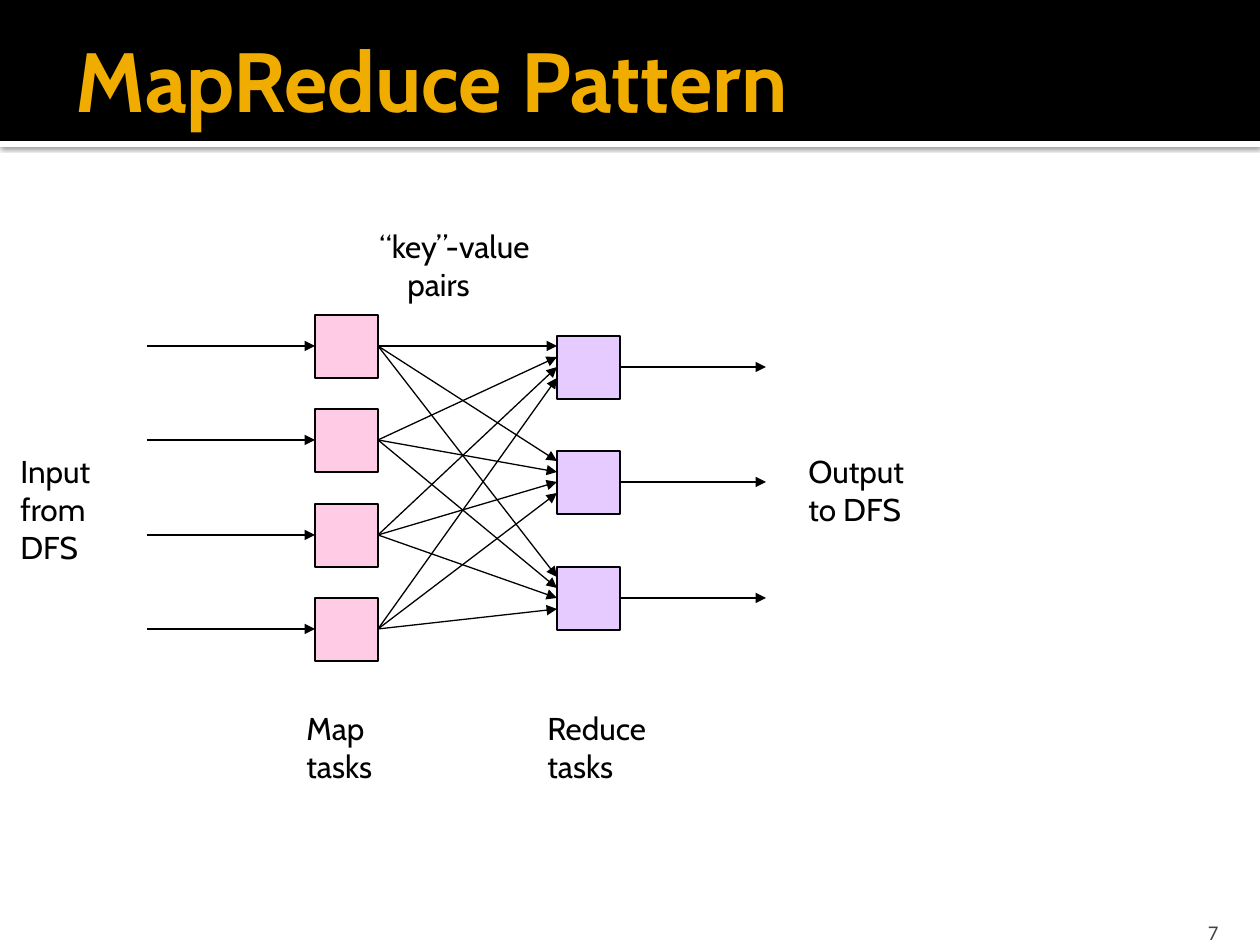
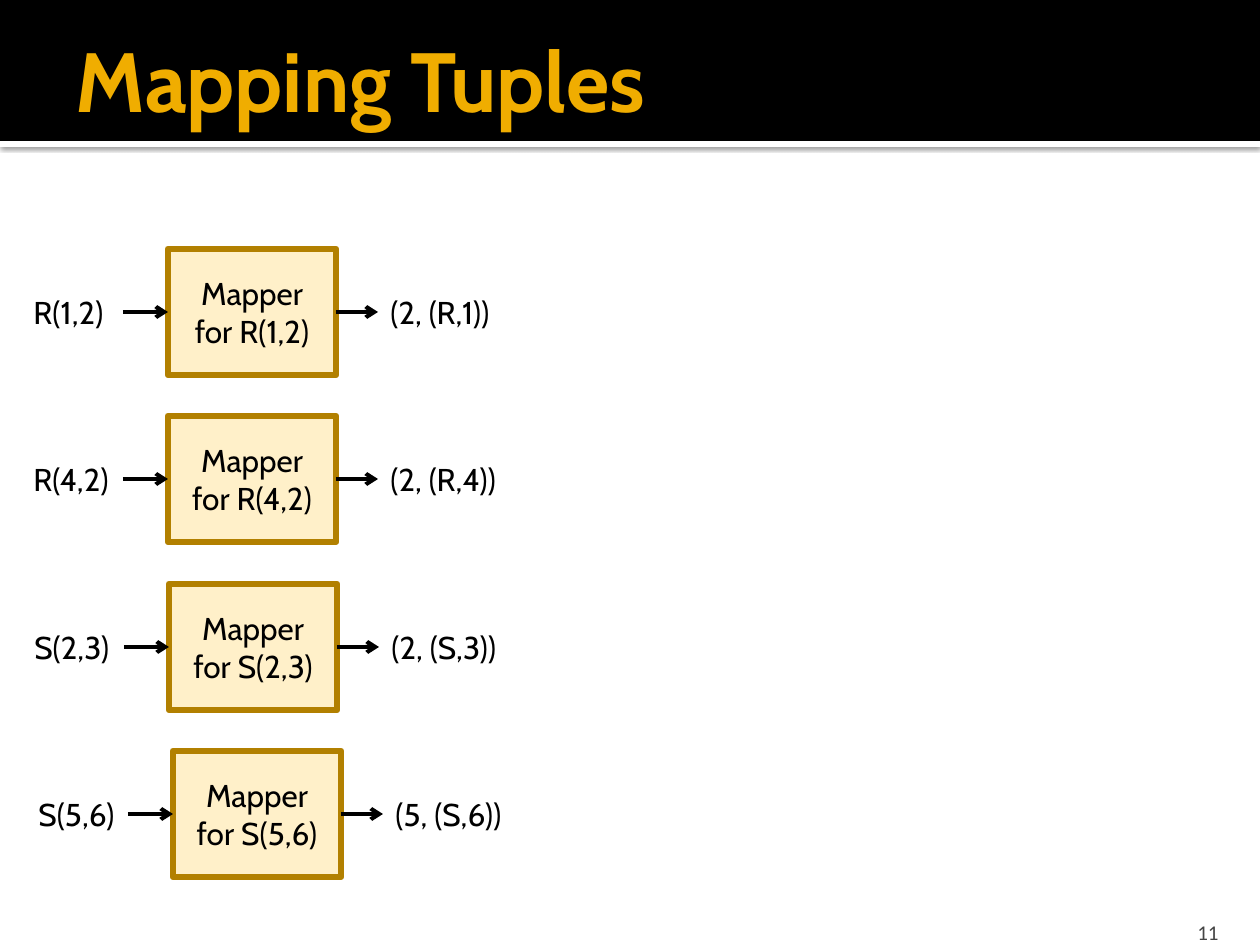
from lxml.etree import SubElement
from pptx import Presentation
from pptx.dml.color import RGBColor
from pptx.enum.shapes import MSO_CONNECTOR as LINK, MSO_SHAPE as FORM
from pptx.enum.text import MSO_ANCHOR as ANCHOR, PP_ALIGN as ALIGN
from pptx.oxml.ns import qn
from pptx.util import Inches, Pt

PX = Inches(1) / 126
BLACK = RGBColor(0x00, 0x00, 0x00)
WHITE = RGBColor(0xFF, 0xFF, 0xFF)
GOLD = RGBColor(0xF0, 0xAD, 0x00)
BROWN = RGBColor(0xB2, 0x80, 0x00)
CREAM = RGBColor(0xFF, 0xF0, 0xC9)
PINK = RGBColor(0xFF, 0x99, 0xCC)
LILAC = RGBColor(0xCC, 0x99, 0xFF)
GREY = RGBColor(0x45, 0x45, 0x45)


def write(slide, text, box=None, size=18, font="Cabin", color=BLACK, bold=False,
          align=ALIGN.LEFT, anchor=ANCHOR.TOP, indent=0,
          fill=None, alpha=None, edge=None, weight=0.75):
    """Fill the title, or a new box at (left, top, width, height) in px."""
    if box is None:
        shape = slide.shapes.title
    elif fill is None:
        shape = slide.shapes.add_textbox(*[round(n * PX) for n in box])
    else:
        shape = slide.shapes.add_shape(FORM.RECTANGLE, *[round(n * PX) for n in box])
        shape.shadow.inherit = False
        shape.fill.solid()
        shape.fill.fore_color.rgb = fill
        if alpha:
            tone = shape.element.spPr.find(f".//{qn('a:srgbClr')}")
            SubElement(tone, qn("a:alpha"), val=str(alpha * 1000))
        if edge is None:
            shape.line.fill.background()
        else:
            shape.line.color.rgb = edge
            shape.line.width = Pt(weight)
    if not text:
        return shape
    frame = shape.text_frame
    frame.word_wrap = True
    frame.vertical_anchor = anchor
    frame.text = text
    for para in frame.paragraphs:
        para.alignment = align
        for run in para.runs:
            run.font.size = Pt(size)
            run.font.name = font
            run.font.bold = bold
            run.font.color.rgb = color
    if indent:
        frame.paragraphs[-1]._p.get_or_add_pPr().set("marL", str(round(indent * PX)))
    return shape


def arrow(slide, x1, y1, x2, y2, weight=0.75, head="triangle"):
    link = slide.shapes.add_connector(LINK.STRAIGHT, *[round(n * PX) for n in (x1, y1, x2, y2)])
    link.line.color.rgb = BLACK
    link.line.width = Pt(weight)
    SubElement(link.get_or_add_ln(), qn("a:tailEnd"), type=head)
    SubElement(link.element.spPr, qn("a:effectLst"))


deck = Presentation()
deck.slide_width = Inches(10)
deck.slide_height = Inches(7.5)
base = deck.slide_layouts[5]

# Titles and page numbers
pages = []
for title, number in (("MapReduce Pattern", 7), ("Mapping Tuples", 11)):
    page = deck.slides.add_slide(base)
    write(page, title, size=48, color=GOLD, bold=True, anchor=ANCHOR.MIDDLE)
    note = write(page, str(number), (1130, 907, 101, 38), size=12, font="Calibri",
                 color=GREY, align=ALIGN.RIGHT, anchor=ANCHOR.BOTTOM)
    note.text_frame.margin_bottom = 0
    pages.append(page)
flow, tuples = pages

# Shared layout: title place and the two bands behind it
head = base.placeholders[0]
head.left, head.top, head.width, head.height = [round(n * PX) for n in (63, 21, 1197, 116)]
head.text_frame.margin_left = Inches(0.1)
head.text_frame.margin_right = Inches(0.05)
strip = write(flow, "", (0, 141, 1260, 6), fill=WHITE)
shade = SubElement(strip.element.spPr.find(qn("a:effectLst")), qn("a:outerShdw"),
                   blurRad=str(Pt(2.5)), dist=str(Pt(0.8)), dir="5400000", rotWithShape="0")
tone = SubElement(shade, qn("a:srgbClr"), val=str(BLACK))
SubElement(tone, qn("a:alpha"), val="60000")
band = write(flow, "", (0, 0, 1260, 141), fill=BLACK)
for part in (strip, band):
    head.element.addprevious(part.element)

# Slide 1: map and reduce tasks
SIDE = 63
MAP_X, RED_X = 315, 557
maps = [315 + 189 * i // 2 for i in range(4)]
reds = [336 + 231 * j // 2 for j in range(3)]
for top in maps:
    write(flow, "", (MAP_X, top, SIDE, SIDE), fill=PINK, alpha=50, edge=BLACK)
    arrow(flow, 147, top + SIDE // 2, MAP_X, top + SIDE // 2)
for top in reds:
    write(flow, "", (RED_X, top, SIDE, SIDE), fill=LILAC, alpha=50, edge=BLACK)
    arrow(flow, RED_X + SIDE, top + SIDE // 2, 766, top + SIDE // 2)

# Every map task feeds every reduce task
for i, start in enumerate(maps):
    for end in reds:
        arrow(flow, MAP_X + SIDE, start + SIDE // 2, RED_X, end + 21 * (i + 1) // 2)

# Labels
for text, box in (
    ("Map\ntasks", (294, 703, 120, 113)),
    ("Reduce\ntasks", (535, 703, 161, 113)),
    ("Input\nfrom\nDFS", (8, 446, 125, 164)),
    ("Output\nto DFS", (796, 446, 154, 113)),
):
    write(flow, text, box)
write(flow, "“key”-value\npairs", (367, 221, 237, 113), indent=28)

# Slide 2: one mapper per tuple, with a small shift of the lower rows
rows = (
    ("R(1,2)", "(2, (R,1))", 0),
    ("R(4,2)", "(2, (R,4))", 0),
    ("S(2,3)", "(2, (S,3))", 1),
    ("S(5,6)", "(5, (S,6))", 5),
)
for i, (item, pair, shift) in enumerate(rows):
    top = 249 + 335 * i // 2
    mid = top + 63
    write(tuples, f"Mapper for {item}", (168 + shift, top, 168, 126), align=ALIGN.CENTER,
          anchor=ANCHOR.MIDDLE, fill=CREAM, edge=BROWN, weight=3.78)
    write(tuples, item, (21 + shift, mid - 25, 105, 50))
    write(tuples, pair, (378 + shift, mid - 25, 140, 50))
    for x1, x2 in ((123, 168), (336, 378)):
        arrow(tuples, x1 + shift, mid, x2 + shift, mid, weight=2.25, head="arrow")

deck.save("out.pptx")
